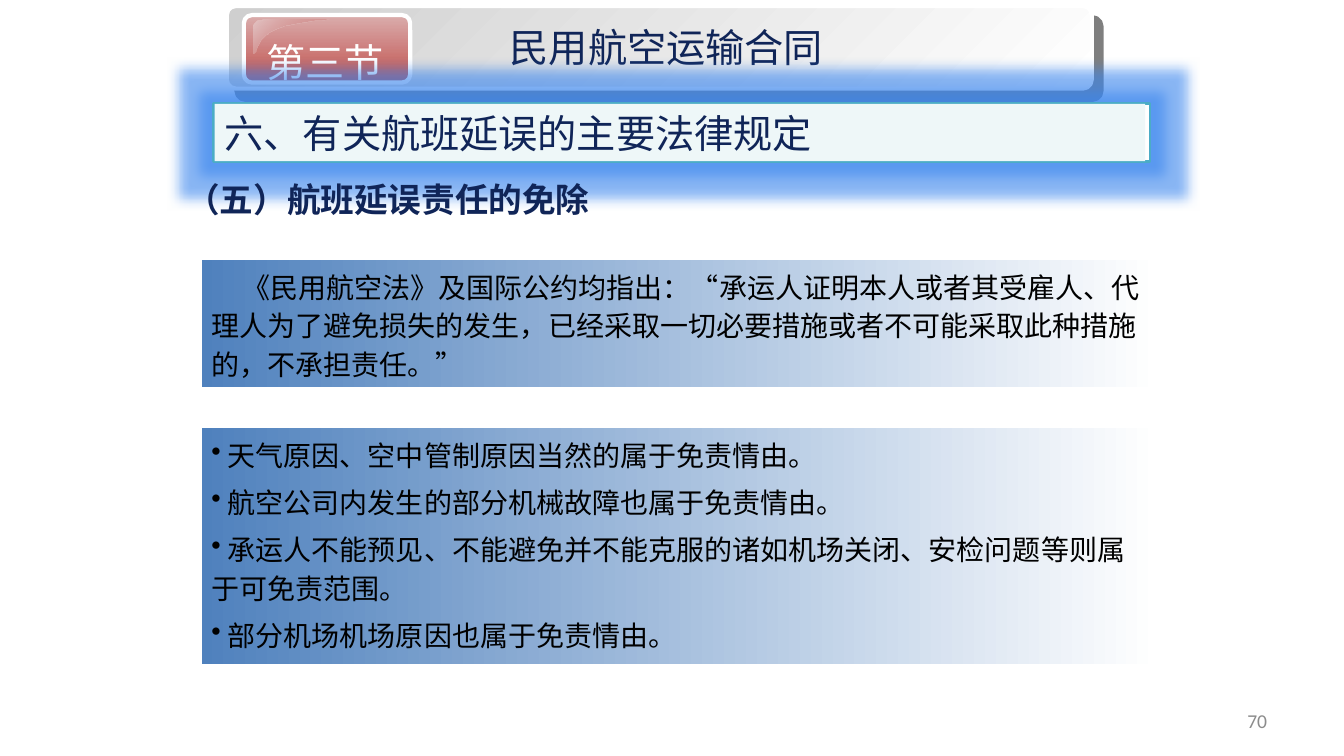
import pptx
import pptx.util
import pptx.dml.color
import pptx.enum.shapes
import pptx.enum.text
import pptx.oxml

Pt = pptx.util.Pt
SHAPE = pptx.enum.shapes.MSO_SHAPE
ALIGN = pptx.enum.text.PP_ALIGN
ANCHOR = pptx.enum.text.MSO_ANCHOR
NS = 'xmlns:a="http://schemas.openxmlformats.org/drawingml/2006/main"'
NAVY = "102558"


def rgb(hex_color):
    return pptx.dml.color.RGBColor.from_string(hex_color)


def a_element(xml):
    """Parse a DrawingML element whose opening tag ends in the marker NS."""
    return pptx.oxml.parse_xml(xml.replace("NS", NS, 1))


def alpha_color(color, percent):
    return f'<a:srgbClr val="{color}"><a:alpha val="{percent * 1000}"/></a:srgbClr>'


def shadow_effect(color, percent, distance, angle):
    return a_element(
        f'<a:outerShdw NS blurRad="0" dist="{Pt(distance)}" dir="{angle * 60000}" '
        f'algn="ctr" rotWithShape="0">{alpha_color(color, percent)}</a:outerShdw>')


def paint(shape, colors, angle=0, line=None, line_width=0):
    """Fill with one colour, or a two-colour gradient turned clockwise by angle."""
    shape.shadow.inherit = False
    if len(colors) == 1:
        shape.fill.solid()
        shape.fill.fore_color.rgb = rgb(colors[0])
    else:
        shape.fill.gradient()
        shape.fill.gradient_angle = (360 - angle) % 360
        for stop, color in zip(shape.fill.gradient_stops, colors):
            stop.color.rgb = rgb(color)
    if line:
        shape.line.color.rgb = rgb(line)
        shape.line.width = Pt(line_width)
    else:
        shape.line.fill.background()


def add_box(slide, kind, box, colors, corner=None, **style):
    shape = slide.shapes.add_shape(kind, *map(Pt, box))
    if corner is not None:
        shape.adjustments[0] = corner
    paint(shape, colors, **style)
    return shape


def write(shape, lines, size, color, font="Arial", align=ALIGN.LEFT,
          anchor=ANCHOR.TOP, wrap=True, bold=False):
    frame = shape.text_frame
    frame.word_wrap = wrap
    frame.vertical_anchor = anchor
    frame.text = "\n".join(lines)
    for paragraph in frame.paragraphs:
        paragraph.alignment = align
        paragraph.font.name = font
        paragraph.font.size = Pt(size)
        paragraph.font.bold = bold
        paragraph.font.color.rgb = rgb(color)
    return frame.paragraphs


def add_text(slide, box, text, size, color, **style):
    return write(slide.shapes.add_textbox(*map(Pt, box)), [text], size, color, **style)


def bezier(p0, p1, p2, p3, steps=10):
    for i in range(1, steps + 1):
        t = i / steps
        weights = ((1 - t) ** 3, 3 * t * (1 - t) ** 2, 3 * t * t * (1 - t), t ** 3)
        yield tuple(sum(w * p[axis] for w, p in zip(weights, (p0, p1, p2, p3)))
                    for axis in (0, 1))


def add_gloss(slide, left, top, width, height):
    """Light reflection in the upper left corner of the section tab."""
    def at(x, y):
        return left + x * width, top + y * height

    start, corner = at(0.21, 0), at(0, 1)
    outline = [*bezier(start, at(0.1, 0), at(0, 0.08), at(0, 0.18)), corner,
               *bezier(corner, at(0.05, 1), at(0.02, 0.52), at(0.27, 0.3)),
               *bezier(at(0.27, 0.3), at(0.52, 0.06), at(1, 0.03), at(1, 0))]
    builder = slide.shapes.build_freeform(*start, scale=Pt(1))
    builder.add_line_segments(outline, close=True)
    gloss = builder.convert_to_shape()
    paint(gloss, ("E3C4C4", "C0504D"), angle=45)
    last_color = gloss.fill._xPr.findall(".//{*}srgbClr")[-1]
    last_color.append(a_element('<a:alpha NS val="0"/>'))


def add_header(slide, left, top, width, height):
    """Section band with its red tab and title."""
    band = add_box(slide, SHAPE.ROUNDED_RECTANGLE, (left, top, width, height),
                   ("CFCFCF", "FFFFFF"), corner=0.109, angle=45,
                   line="FFFFFF", line_width=3)
    band._element.spPr.find("{*}effectLst").append(shadow_effect("000000", 50, 10.6, 49))
    add_box(slide, SHAPE.ROUNDED_RECTANGLE, (left + 12.2, top + 6.5, 118.8, 48.2),
            ("DAADAC", "C0504D"), corner=0.119, angle=90,
            line="FFFFFF", line_width=3)
    add_gloss(slide, left + 19.4, top + 9.4, 59, 23.8)
    section, = add_text(slide, (left + 20.9, top + 19.5, 98.6, 41), "第三节", 28,
                        "FFFFFF", align=ALIGN.CENTER, wrap=False)
    effects = a_element("<a:effectLst NS/>")
    effects.append(shadow_effect("000000", 100, 2.5, 45))
    section.runs[0].font._element.append(effects)
    add_text(slide, (left + 134, top + 8.7, 360, 41), "民用航空运输合同", 28, NAVY,
             align=ALIGN.CENTER)


def add_topic(slide, left, top, width, height):
    """Glowing frame with the topic on a pale panel."""
    frame = add_box(slide, SHAPE.RECTANGLE, (left, top, width, height), ("FFFFFF",),
                    line="4BACC6", line_width=2)
    frame._element.spPr.find("{*}effectLst").append(a_element(
        f'<a:glow NS rad="{Pt(18)}">{alpha_color("3B86EE", 60)}</a:glow>'))
    panel = add_box(slide, SHAPE.RECTANGLE, (left + 0.8, top, width - 4.3, height),
                    ("EEF7F8",))
    write(panel, ["六、有关航班延误的主要法律规定"], 28, NAVY)


def add_passage(slide, box, lines, bullet=False, first_indent=0):
    panel = add_box(slide, SHAPE.RECTANGLE, box, ("4F81BD", "FFFFFF"))
    for paragraph in write(panel, lines, 20, "000000", font="Times New Roman"):
        paragraph.line_spacing = 1.15
        paragraph.space_before = Pt(6)
        properties = paragraph._p.get_or_add_pPr()
        properties.set("marL", "0")
        properties.set("indent", str(Pt(first_indent)))
        if bullet:
            mark = a_element('<a:buChar NS char="•"/>')
            properties.find("{*}defRPr").addprevious(mark)


def main():
    presentation = pptx.Presentation()
    presentation.slide_width, presentation.slide_height = Pt(960), Pt(540)
    slide = presentation.slides.add_slide(presentation.slide_layouts[6])

    add_text(slide, (688.3, 500.4, 223.9, 28.8), "70", 14, "8C8C8C", font="Calibri",
             align=ALIGN.RIGHT, anchor=ANCHOR.MIDDLE)
    add_header(slide, 162, 4.3, 617.8, 59)
    add_topic(slide, 152.6, 74.2, 668.9, 41)
    add_text(slide, (126, 124.6, 303.8, 36), "（五）航班延误责任的免除", 24, NAVY,
             wrap=False, bold=True)
    add_passage(slide, (144, 185.8, 684, 90.7), [
        "《民用航空法》及国际公约均指出：“承运人证明本人或者其受雇人、代理人为了避免损失的发生，"
        "已经采取一切必要措施或者不可能采取此种措施的，不承担责任。”"], first_indent=22)
    add_passage(slide, (144, 306, 684, 168.5), [
        " 天气原因、空中管制原因当然的属于免责情由。",
        " 航空公司内发生的部分机械故障也属于免责情由。",
        " 承运人不能预见、不能避免并不能克服的诸如机场关闭、安检问题等则属于可免责范围。",
        " 部分机场机场原因也属于免责情由。"], bullet=True)
    presentation.save("out.pptx")


if __name__ == "__main__":
    main()
